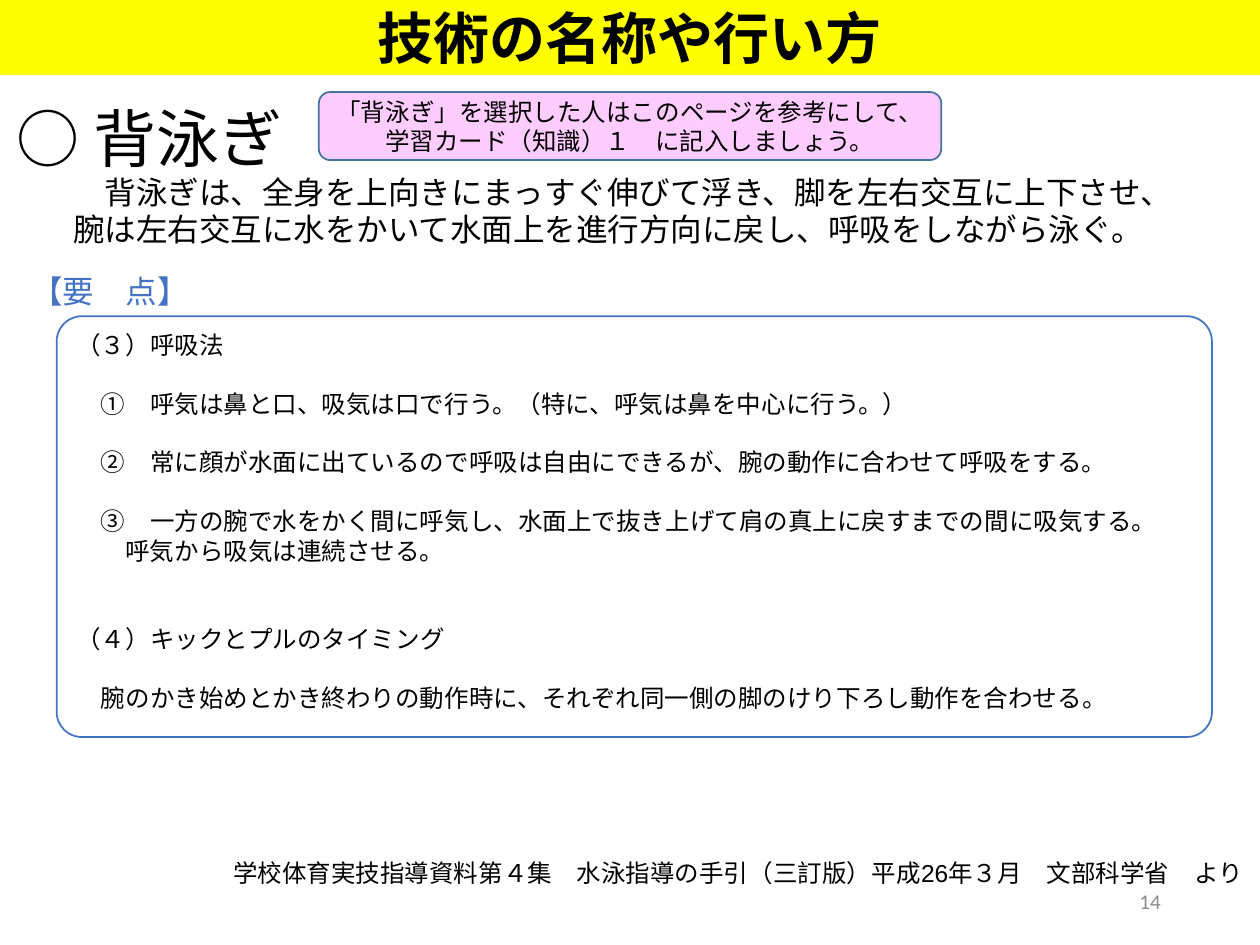
import pptx
import pptx.dml.color
import pptx.enum.shapes
import pptx.enum.text
import pptx.util

Pt = pptx.util.Pt
SHAPES = pptx.enum.shapes.MSO_SHAPE
ALIGN = pptx.enum.text.PP_ALIGN
ANCHOR = pptx.enum.text.MSO_ANCHOR
BLACK = "000000"
BLUE = "4472C4"
YELLOW = "FFFF00"


def color(value):
    """Turn a hex string into a colour."""
    return pptx.dml.color.RGBColor.from_string(value)


def format_runs(para, size, ink=BLACK, font="Calibri", bold=False):
    """Format every run of a paragraph."""
    for span in para.runs:
        span.font.size = Pt(size)
        span.font.name = font
        span.font.bold = bold
        span.font.color.rgb = color(ink)


def write(box, text, size, ink=BLACK, align=ALIGN.LEFT, anchor=ANCHOR.TOP, bold=False):
    """Fill a box with lines of uniform text and return its paragraphs."""
    frame = box.text_frame
    frame.text = text
    frame.vertical_anchor = anchor
    for para in frame.paragraphs:
        para.alignment = align
        format_runs(para, size, ink, bold=bold)
    return frame.paragraphs


def add_text_box(page, left, top, width, height, wrap=True, inset=True):
    """Add an empty text box, with or without inner margins."""
    box = page.shapes.add_textbox(Pt(left), Pt(top), Pt(width), Pt(height))
    frame = box.text_frame
    frame.word_wrap = wrap
    if not inset:
        frame.margin_left = frame.margin_right = 0
        frame.margin_top = frame.margin_bottom = 0
    return box


def add_panel(page, kind, left, top, width, height, line, fill=None):
    """Add an outlined shape with an optional fill."""
    panel = page.shapes.add_shape(kind, Pt(left), Pt(top), Pt(width), Pt(height))
    panel.shadow.inherit = False
    panel.line.color.rgb = color(line)
    panel.line.width = Pt(1)
    if fill:
        panel.fill.solid()
        panel.fill.fore_color.rgb = color(fill)
    else:
        panel.fill.background()
    return panel


def indent(para, left, first=0):
    """Set the left margin and first-line indent of a paragraph."""
    properties = para._p.get_or_add_pPr()
    properties.set("marL", str(Pt(left)))
    properties.set("indent", str(Pt(first)))


def add_key_points(page):
    """Add the rounded panel of key points, spaced by whole lines."""
    size, line_height = 14, 16.8
    points = [
        ("（３）呼吸法", 0, 0),
        ("①　呼気は鼻と口、吸気は口で行う。（特に、呼気は鼻を中心に行う。）", 1, 1),
        ("②　常に顔が水面に出ているので呼吸は自由にできるが、腕の動作に合わせて呼吸をする。", 1, 1),
        ("③　一方の腕で水をかく間に呼気し、水面上で抜き上げて肩の真上に戻すまでの間に吸気する。", 1, 1),
        ("呼気から吸気は連続させる。", 2, 0),
        ("（４）キックとプルのタイミング", 0, 2),
        ("腕のかき始めとかき終わりの動作時に、それぞれ同一側の脚のけり下ろし動作を合わせる。", 1, 1),
    ]
    panel = add_panel(page, SHAPES.ROUNDED_RECTANGLE, 32.4, 180.7, 660.2, 240.5, BLUE)
    panel.adjustments[0] = 0.06
    paras = write(panel, "\n".join(text for text, _, _ in points), size)
    for para, (_, level, gap) in zip(paras, points):
        indent(para, level * size)
        para.space_before = Pt(gap * line_height)


def add_source_note(page):
    """Add the reference at the foot of the page."""
    box = add_text_box(page, 133.2, 490.3, 579.6, 17.3, inset=False)
    para = box.text_frame.paragraphs[0]
    parts = [
        ("学校体育実技指導資料第４集　水泳指導の手引（三訂版）", "Roboto"),
        ("平成26年３月　文部", "Arial"),
        ("科学省　より", "Roboto"),
    ]
    for text, _ in parts:
        para.add_run().text = text
    format_runs(para, 14)
    for span, (_, font) in zip(para.runs, parts):
        span.font.name = font


def main():
    """Build the backstroke page and save it."""
    deck = pptx.Presentation()
    deck.slide_width, deck.slide_height = Pt(720), Pt(540)
    page = deck.slides.add_slide(deck.slide_layouts[6])

    heading = add_text_box(page, 2.2, 57.6, 168.5, 46.8, wrap=False)
    write(heading, "○ 背泳ぎ", 36, anchor=ANCHOR.MIDDLE)[0].line_spacing = 0.9

    number = add_text_box(page, 508.3, 500.4, 162, 28.8)
    write(number, "14", 12, "8C8C8C", ALIGN.RIGHT, ANCHOR.MIDDLE)

    summary = add_text_box(page, 41.8, 98.6, 636.5, 43.9, inset=False)
    lines = write(
        summary,
        "背泳ぎは、全身を上向きにまっすぐ伸びて浮き、脚を左右交互に上下させ、\n"
        "腕は左右交互に水をかいて水面上を進行方向に戻し、呼吸をしながら泳ぐ。",
        18,
    )
    indent(lines[0], 0, 18)

    add_source_note(page)
    label = add_text_box(page, 10.8, 151.9, 105.1, 28.8, wrap=False)
    write(label, "【要　点】", 18, BLUE)
    add_key_points(page)

    banner = add_panel(page, SHAPES.RECTANGLE, 0, 0, 720, 42.5, YELLOW, YELLOW)
    write(banner, "技術の名称や行い方", 32, BLACK, ALIGN.CENTER, ANCHOR.MIDDLE, True)

    notice = add_panel(
        page, SHAPES.ROUNDED_RECTANGLE, 182.2, 52.6, 355.7, 38.9, "43739E", "FFCCFF"
    )
    write(
        notice,
        "「背泳ぎ」を選択した人はこのページを参考にして、\n"
        "学習カード（知識）１　に記入しましょう。",
        14, BLACK, ALIGN.CENTER, ANCHOR.MIDDLE,
    )
    deck.save("out.pptx")


if __name__ == "__main__":
    main()
